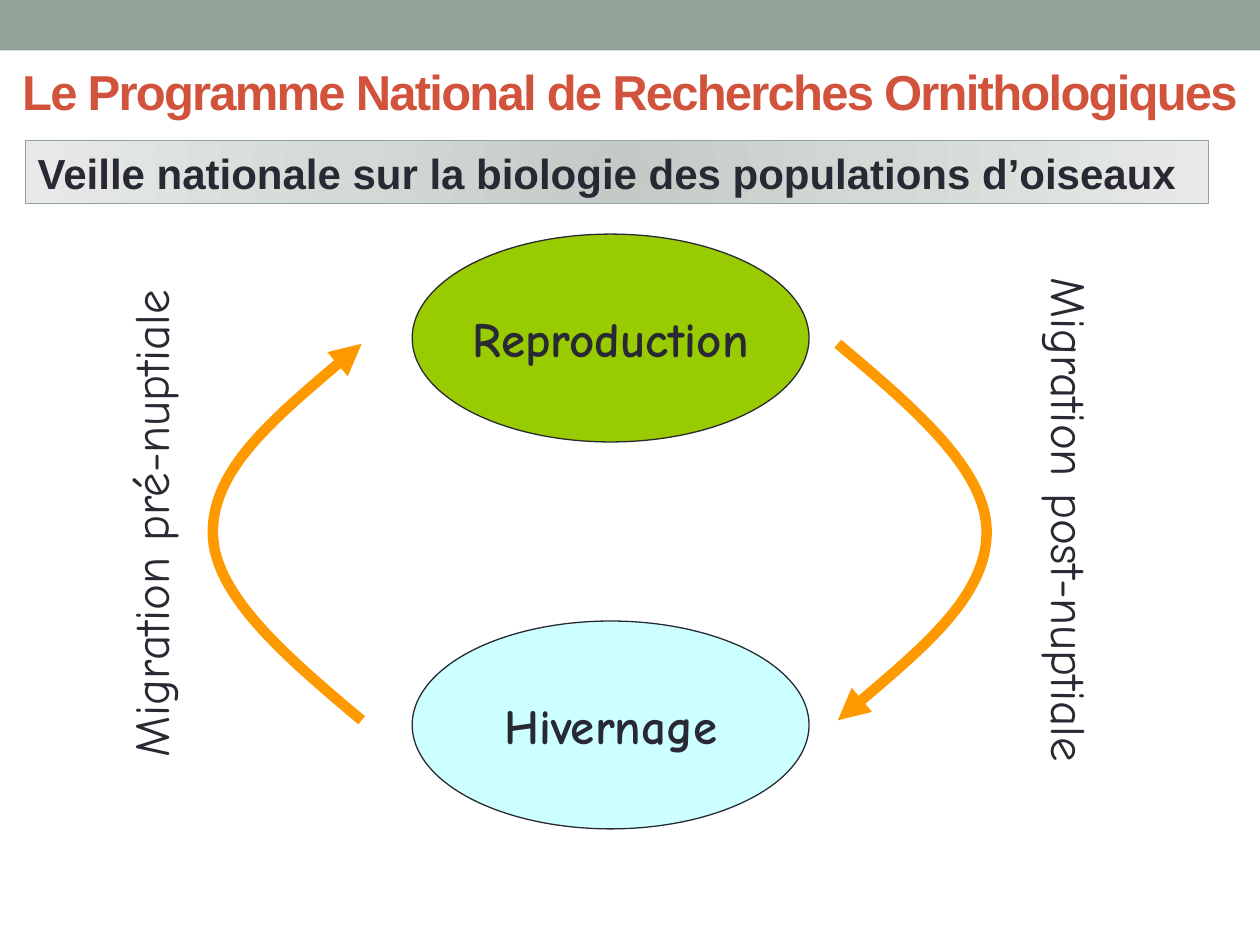
import pptx
import pptx.dml.color
import pptx.enum.shapes
import pptx.enum.text
import pptx.oxml
import pptx.oxml.ns
import pptx.util

Cm = pptx.util.Cm
RGBColor = pptx.dml.color.RGBColor
Shape = pptx.enum.shapes.MSO_SHAPE
Align = pptx.enum.text.PP_ALIGN
Anchor = pptx.enum.text.MSO_ANCHOR
AutoSize = pptx.enum.text.MSO_AUTO_SIZE
qn = pptx.oxml.ns.qn

SAGE = RGBColor(0x93, 0xA2, 0x99)
RED = RGBColor(0xD2, 0x53, 0x3C)
INK = RGBColor(0x29, 0x29, 0x34)
GREEN = RGBColor(0x99, 0xCC, 0x00)
PALE_BLUE = RGBColor(0xCC, 0xFF, 0xFF)
ORANGE = RGBColor(0xFF, 0x99, 0x00)
BANNER_STOPS = (
    (0, RGBColor(0xC4, 0xCA, 0xC6)),
    (45, RGBColor(0xD3, 0xDA, 0xD6)),
    (100, RGBColor(0xE7, 0xEA, 0xE8)),
)

HEADING = {"name": "Arial", "bold": True}
LABEL = {"name": "Comic Neue"}

# Two Bézier pieces that bulge to the right, as shares of width and height
CURVE = ((1 / 2, 1 / 6), (1, 1 / 3), (1, 1 / 2), (1, 2 / 3), (1 / 2, 5 / 6), (0, 1))


def write_text(box, text, size, color, font, align=Align.CENTER, frame=None):
    """Put one formatted paragraph into a shape or text box."""
    settings = {"word_wrap": True, **(frame or {})}
    for name, value in settings.items():
        setattr(box.text_frame, name, value)
    para = box.text_frame.paragraphs[0]
    para.alignment = align
    span = para.add_run()
    span.text = text
    for name, value in {"size": pptx.util.Pt(size), **font}.items():
        setattr(span.font, name, value)
    span.font.color.rgb = color
    return span


def add_area(page, kind, left, top, width, height, fill, line=None):
    """Add a preset shape with a plain fill and an optional thin outline."""
    area = page.shapes.add_shape(kind, Cm(left), Cm(top), Cm(width), Cm(height))
    area.shadow.inherit = False
    area.fill.solid()
    area.fill.fore_color.rgb = fill
    if line is None:
        area.line.fill.background()
    else:
        area.line.color.rgb = line
        area.line.width = pptx.util.Pt(0.75)
    return area


def add_title(page, text):
    box = page.shapes.add_textbox(Cm(0), Cm(0.76), Cm(25.4), Cm(2.16))
    span = write_text(box, text, 28, RED, HEADING,
                      frame={"vertical_anchor": Anchor.MIDDLE})
    span.font._element.set("spc", "-100")


def add_banner(page, text):
    """Add the subtitle bar with its radial gradient."""
    banner = add_area(page, Shape.RECTANGLE, 0.51, 2.84, 23.85, 1.27, SAGE, SAGE)
    stops = "".join(
        f'<a:gs pos="{share * 1000}"><a:srgbClr val="{color}"/></a:gs>'
        for share, color in BANNER_STOPS)
    gradient = pptx.oxml.parse_xml(
        f'<a:gradFill {pptx.oxml.ns.nsdecls("a")} rotWithShape="1">'
        f'<a:gsLst>{stops}</a:gsLst><a:path path="circle">'
        '<a:fillToRect l="100000" t="100000" r="100000" b="100000"/>'
        '</a:path></a:gradFill>')
    properties = banner.element.spPr
    properties.replace(properties.find(qn("a:solidFill")), gradient)
    write_text(banner, text, 24, INK, HEADING, Align.LEFT,
               {"vertical_anchor": Anchor.TOP,
                "auto_size": AutoSize.SHAPE_TO_FIT_TEXT})


def add_stage(page, text, top, fill):
    """Add one oval of the yearly cycle."""
    oval = add_area(page, Shape.OVAL, 8.31, top, 8, 4.19, fill, INK)
    write_text(oval, text, 28, INK, {**LABEL, "bold": True},
               frame={"word_wrap": False, "vertical_anchor": Anchor.MIDDLE})


def add_curved_arrow(page, left, rotation):
    """Add a bulging arrow; the straight segments become Bézier pieces."""
    top, width, height = 6.93, 3, 7.59
    builder = page.shapes.build_freeform(Cm(left), Cm(top))
    builder.add_line_segments(
        [(Cm(left + x * width), Cm(top + y * height)) for x, y in CURVE],
        close=False)
    arrow = builder.convert_to_shape()
    segments = arrow.element.xpath(".//a:lnTo")
    for start in range(0, len(segments), 3):
        first, *others = segments[start:start + 3]
        first.tag = qn("a:cubicBezTo")
        for segment in others:
            first.append(segment[0])
            segment.getparent().remove(segment)
    arrow.rotation = rotation
    arrow.shadow.inherit = False
    arrow.fill.background()
    arrow.line.color.rgb = ORANGE
    arrow.line.width = pptx.util.Pt(6)
    head = arrow.element.spPr.find(qn("a:ln")).makeelement(
        qn("a:tailEnd"), {"type": "triangle"})
    arrow.element.spPr.find(qn("a:ln")).append(head)


def add_side_label(page, text, left, top, width, rotation):
    box = page.shapes.add_textbox(Cm(left), Cm(top), Cm(width), Cm(1.45))
    box.rotation = rotation
    write_text(box, text, 28, INK, LABEL,
               frame={"auto_size": AutoSize.SHAPE_TO_FIT_TEXT})


def main():
    deck = pptx.Presentation()
    deck.slide_width, deck.slide_height = Cm(25.4), Cm(19.05)
    page = deck.slides.add_slide(deck.slide_layouts[6])

    # Heading
    add_area(page, Shape.RECTANGLE, 0, 0, 25.4, 1.02, SAGE)
    add_title(page, "Le Programme National de Recherches Ornithologiques")

    # Stages of the cycle
    add_stage(page, "Reproduction", 4.72, GREEN)
    add_stage(page, "Hivernage", 12.52, PALE_BLUE)

    # Migrations between the stages
    add_curved_arrow(page, 16.89, 0)
    add_side_label(page, "Migration post-nuptiale", 15.14, 9.75, 12.88, 90)
    add_curved_arrow(page, 4.29, 180)
    add_side_label(page, "Migration pré-nuptiale", -2.62, 9.83, 11.28, 270)

    # Subtitle
    add_banner(page, "Veille nationale sur la biologie des populations d’oiseaux")

    deck.save("out.pptx")


if __name__ == "__main__":
    main()
